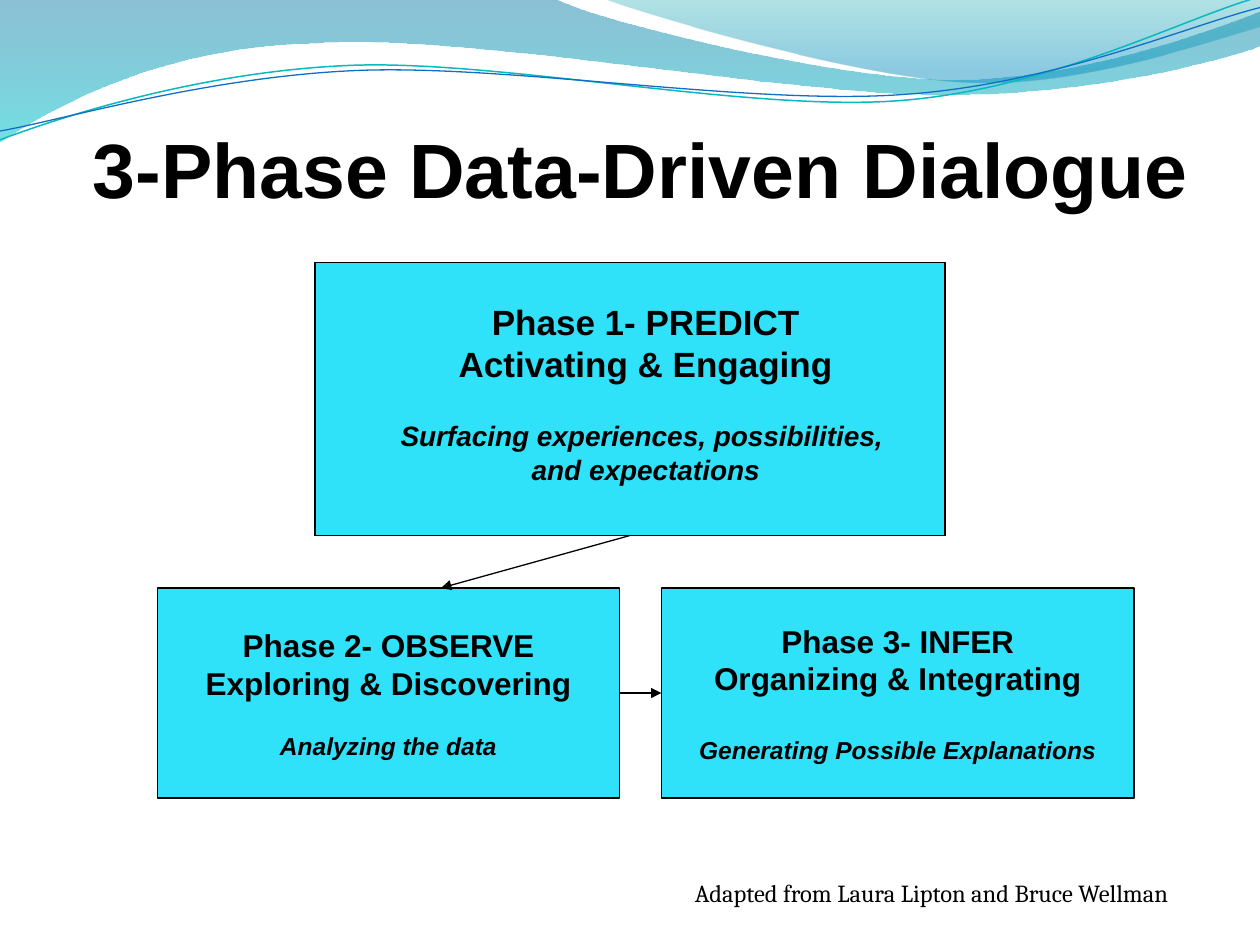
from lxml import etree
from pptx import Presentation, util as u
from pptx.dml.color import RGBColor
from pptx.enum import shapes, text
from pptx.oxml.ns import qn

COLUMNS, ROWS = 120, 90
COLORS = {
    "ink": "000000", "panel": "2FE1F9",
    "deep_blue": "0074A1", "aqua": "00C6CF",
    "teal": "00A1A9", "blue": "008BBF",
    "teal_line": "0AB8BF", "blue_line": "0F6FC6",
}
BANDS = [
    ((0, 0), [
        (4.4, -0.01), (4.76, 0.17, 6.64, 0.63, 7.58, 0.63),
        (8.53, 0.63, 9.58, 0.26, 10, 0.09), (10.01, 0.36),
        (9.83, 0.44, 8.7, 0.76, 7.46, 0.75),
        (6.22, 0.75, 3.82, 0.28, 2.57, 0.34),
        (1.29, 0.36, 0.46, 0.83, -0.01, 1.13), (0, 0),
    ], [(0, "deep_blue", 45), (1, "aqua", 55)]),
    ((4.79, -0.01), [
        (5.09, 0.11, 6.82, 0.62, 7.69, 0.65),
        (8.56, 0.69, 9.61, 0.32, 10, 0.21), (10, 0), (4.79, -0.01),
    ], [(0, "teal", 30), (0.8, "blue", 45)]),
]
STRANDS = [
    ((0, 1.11), [
        (0.48, 0.93, 1.58, 0.57, 2.77, 0.52),
        (3.95, 0.47, 5.93, 0.89, 7.13, 0.8),
        (8.33, 0.71, 9.38, 0.15, 9.98, -0.02),
    ], "teal_line", 0.85),
    ((0, 1.04), [
        (0.47, 0.96, 1.64, 0.61, 2.83, 0.56),
        (4.03, 0.51, 5.97, 0.84, 7.17, 0.75),
        (8.36, 0.67, 9.41, 0.21, 10, 0.06),
    ], "blue_line", 0.75),
]


def color(name):
    return RGBColor.from_string(COLORS[name])


def grid_box(presentation, left, top, width, height):
    column = presentation.slide_width / COLUMNS
    row = presentation.slide_height / ROWS
    return [u.Emu(round(value)) for value in
            (left * column, top * row, width * column, height * row)]


def write(paragraph, words, size=18, font="Arial", bold=True, italic=False,
          align=text.PP_ALIGN.CENTER, before=0):
    paragraph.alignment = align
    paragraph.space_before = u.Pt(before)
    run = paragraph.add_run()
    run.text = words
    run.font.name = font
    run.font.size = u.Pt(size)
    run.font.bold = bold
    run.font.italic = italic
    run.font.color.rgb = color("ink")


def set_line(shape, name="ink", width=0.75):
    shape.line.color.rgb = color(name)
    shape.line.width = u.Pt(width)


def add_curve(slide, box, start, segments, closed):
    left, top, width, _ = box
    points = [(left + x * width / 10, top + y * width / 10)
              for segment in [start, *segments]
              for x, y in zip(segment[::2], segment[1::2])]
    builder = slide.shapes.build_freeform(*points[0])
    builder.add_line_segments(points[1:], close=closed)
    shape = builder.convert_to_shape()
    shape.shadow.inherit = False
    steps = iter(list(shape._element.iter(qn("a:lnTo"))))
    for segment in segments:
        first = next(steps)
        if len(segment) == 6:
            first.tag = qn("a:cubicBezTo")
            for _ in range(2):
                step = next(steps)
                first.append(step[0])
                step.getparent().remove(step)
    return shape


def add_waves(slide, box):
    for start, segments, stops in BANDS:
        band = add_curve(slide, box, start, segments, True)
        band.line.fill.background()
        band.fill.gradient()
        band.fill.gradient_angle = 270
        for stop, (position, name, _) in zip(band.fill.gradient_stops, stops):
            stop.position = position
            stop.color.rgb = color(name)
        tones = band.fill._xPr.iter(qn("a:srgbClr"))
        for tone, (_, _, opacity) in zip(tones, stops):
            etree.SubElement(tone, qn("a:alpha"), val=str(opacity * 1000))
    for start, segments, name, width in STRANDS:
        strand = add_curve(slide, box, start, segments, False)
        strand.fill.background()
        set_line(strand, name, width)


def add_title(slide, box, words):
    title = slide.shapes.title
    title.left, title.top, title.width, title.height = box
    title.text_frame.auto_size = text.MSO_AUTO_SIZE.NONE
    title.text_frame.vertical_anchor = text.MSO_ANCHOR.MIDDLE
    write(title.text_frame.paragraphs[0], words, size=44)


def fill_phase(frame, headings, details, size, detail_size, gap):
    lines = [(words, size, False, 0) for words in headings]
    lines += [(words, detail_size, True, 0 if index else gap)
              for index, words in enumerate(details)]
    for index, (words, points, italic, before) in enumerate(lines):
        paragraph = frame.add_paragraph() if index else frame.paragraphs[0]
        write(paragraph, words, size=points, italic=italic, before=before)


def add_panel(slide, box, filled=True):
    panel = slide.shapes.add_shape(shapes.MSO_SHAPE.RECTANGLE, *box)
    panel.shadow.inherit = False
    if filled:
        panel.fill.solid()
        panel.fill.fore_color.rgb = color("panel")
    else:
        panel.fill.background()
    set_line(panel)
    panel.text_frame.word_wrap = False
    panel.text_frame.vertical_anchor = text.MSO_ANCHOR.MIDDLE
    return panel


def add_text_box(slide, box, wrap):
    frame = slide.shapes.add_textbox(*box).text_frame
    frame.word_wrap = wrap
    return frame


def add_arrow(slide, source, source_side, target=None, target_side=1, end=(0, 0)):
    arrow = slide.shapes.add_connector(shapes.MSO_CONNECTOR.STRAIGHT, 0, 0, *end)
    arrow.begin_connect(source, source_side)
    if target is not None:
        arrow.end_connect(target, target_side)
    set_line(arrow)
    properties = arrow._element.spPr
    etree.SubElement(properties.find(qn("a:ln")), qn("a:tailEnd"), type="triangle")
    etree.SubElement(properties, qn("a:effectLst"))


def add_phases(presentation, slide):
    predict_box = grid_box(presentation, 30, 25, 60, 26)
    add_panel(slide, predict_box)
    predict_text = add_text_box(slide, grid_box(presentation, 36, 28, 51, 19), True)
    fill_phase(predict_text, ["Phase 1- PREDICT", "Activating & Engaging"],
               ["Surfacing experiences, possibilities, ", "and expectations"],
               20, 16, 19.6)
    predict = add_panel(slide, predict_box, filled=False)
    observe = add_panel(slide, grid_box(presentation, 15, 56, 44, 20))
    fill_phase(observe.text_frame, ["Phase 2- OBSERVE", "Exploring & Discovering"],
               ["Analyzing the data"], 18, 14, 16.6)
    infer = add_panel(slide, grid_box(presentation, 63, 56, 45, 20))
    fill_phase(infer.text_frame, ["Phase 3- INFER", "Organizing & Integrating"],
               ["Generating Possible Explanations"], 18, 14, 21.6)
    add_arrow(slide, predict, 2, end=grid_box(presentation, 42, 56, 0, 0)[:2])
    add_arrow(slide, observe, 3, infer)


def add_credit(slide, box):
    frame = add_text_box(slide, box, False)
    write(frame.paragraphs[0], "Adapted from Laura Lipton and Bruce Wellman",
          size=14, font="Cambria", bold=False, align=text.PP_ALIGN.LEFT)


def main():
    presentation = Presentation()
    presentation.slide_width = u.Inches(10)
    presentation.slide_height = u.Inches(7.5)
    slide = presentation.slides.add_slide(presentation.slide_layouts[5])
    add_waves(slide, grid_box(presentation, 0, 0, COLUMNS, 14))
    add_title(slide, grid_box(presentation, 6.4, 11, 109.3, 10),
              "3-Phase Data-Driven Dialogue")
    add_phases(presentation, slide)
    add_credit(slide, grid_box(presentation, 65, 83, 47.5, 4))
    presentation.save("out.pptx")


if __name__ == "__main__":
    main()
